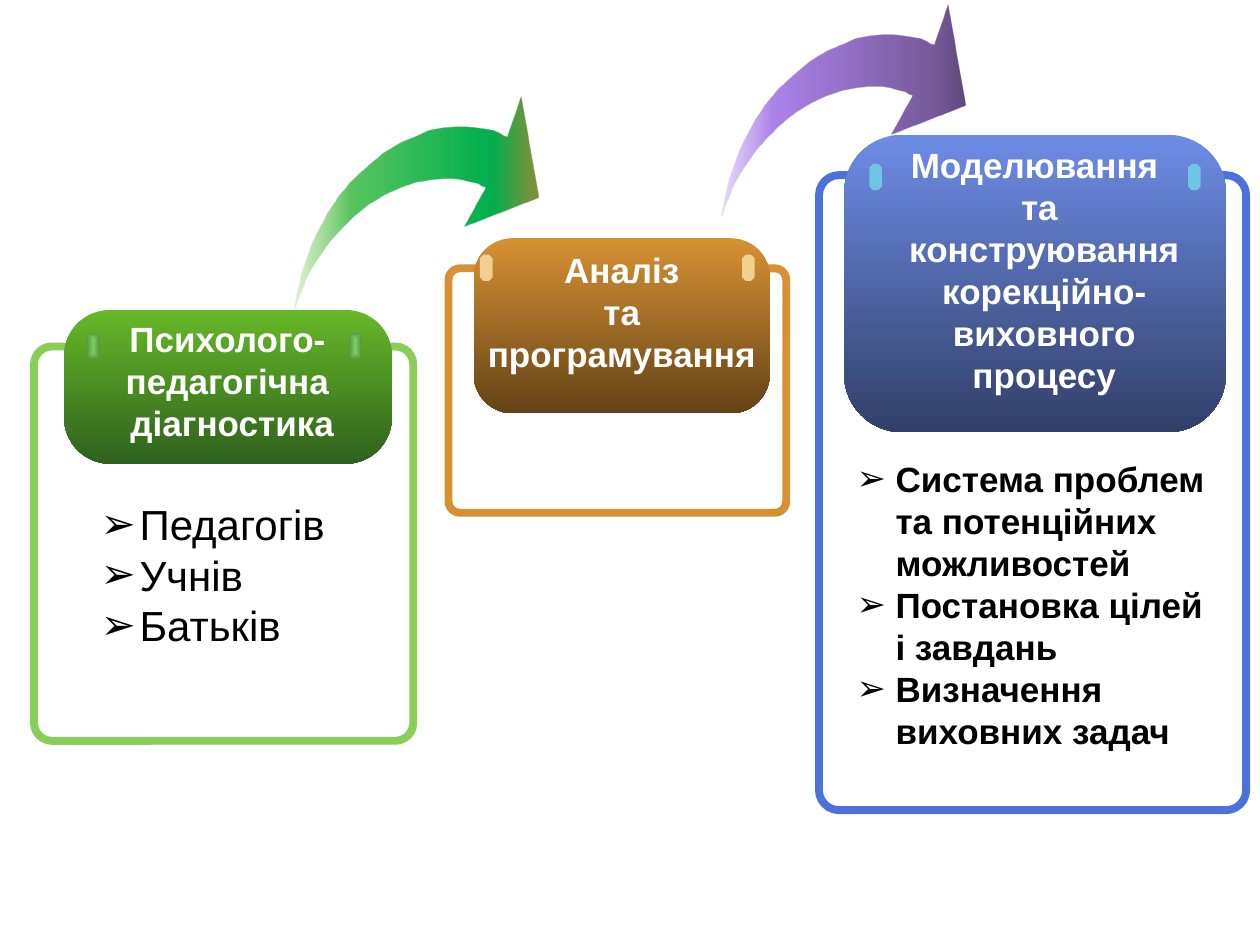
from lxml import etree
from pptx import Presentation
from pptx.dml.color import RGBColor
from pptx.enum.shapes import MSO_SHAPE
from pptx.enum.text import MSO_AUTO_SIZE, PP_ALIGN
from pptx.oxml.ns import qn
from pptx.util import Inches, Pt

COLORS = {
    "text": "000000", "header text": "FFFFFF",
    "green frame": "88CE58", "green top": "66B828", "green bottom": "2F611D",
    "green pin": "7BCF5D", "green pin edge": "589443",
    "orange": "D79133", "orange bottom": "634317", "orange pin": "F1D08F",
    "blue frame": "4B71DD", "blue top": "6D8CE5", "blue bottom": "323F68",
    "blue pin": "6FC5E3",
    "leaf": "98D376", "grass": "59C55E", "emerald": "00B050", "olive": "77933C",
    "lilac": "B694ED", "violet": "AD83EB", "plum": "735896", "dark plum": "604A7B",
}

# Curved arrow outline in hundredths of an inch, from its tail
ARROW_POINTS = [
    (0, 168), (1, 167), (2, 164), (4, 158), (7, 151), (10, 143), (15, 134),
    (21, 125), (28, 115), (37, 105), (47, 95), (58, 86), (71, 78), (84, 72),
    (96, 68), (107, 66), (117, 65), (126, 65), (133, 66), (140, 68), (145, 69),
    (148, 71), (151, 72), (134, 103), (193, 80), (179, 0), (168, 32), (165, 31),
    (162, 29), (157, 27), (151, 26), (144, 25), (136, 24), (127, 24), (117, 25),
    (106, 27), (95, 32), (83, 37), (70, 45), (57, 56), (45, 67), (35, 79),
    (27, 91), (20, 104), (14, 116), (10, 128), (6, 139), (4, 148), (2, 157),
    (1, 163), (0, 167),
]


def rgb(name):
    return RGBColor.from_string(COLORS[name])


class SlideBuilder:
    font = "Arial"
    frame_width = Pt(4.5)
    bullet = "➢"
    bullet_indent = Inches(0.31)

    def __init__(self, slide):
        self.slide = slide

    def shape(self, kind, box, adjustment):
        shape = self.slide.shapes.add_shape(kind, *map(Inches, box))
        shape.adjustments[0] = adjustment
        shape.shadow.inherit = False
        shape.line.fill.background()
        return shape

    def gradient(self, shape, stops, angle=None):
        """Fill with (position, colour, opacity) stops; no angle means from the centre."""
        shape.fill.background()
        properties = shape._element.spPr
        gradient = etree.Element(qn("a:gradFill"), rotWithShape="1")
        stop_list = etree.SubElement(gradient, qn("a:gsLst"))
        for position, color, opacity in stops:
            stop = etree.SubElement(stop_list, qn("a:gs"), pos=str(position * 1000))
            value = etree.SubElement(stop, qn("a:srgbClr"), val=COLORS[color])
            if opacity < 100:
                etree.SubElement(value, qn("a:alpha"), val=str(opacity * 1000))
        if angle is None:
            center = etree.SubElement(gradient, qn("a:path"), path="shape")
            etree.SubElement(center, qn("a:fillToRect"),
                             dict.fromkeys("ltrb", "50000"))
        else:
            etree.SubElement(gradient, qn("a:lin"), ang=str(angle * 60000), scaled="1")
        properties.replace(properties.find(qn("a:noFill")), gradient)

    def frame(self, box, color):
        shape = self.shape(MSO_SHAPE.ROUNDED_RECTANGLE, box, 0.047)
        shape.fill.background()
        shape.line.color.rgb = rgb(color)
        shape.line.width = self.frame_width

    def header(self, box, rounding, top, bottom):
        shape = self.shape(MSO_SHAPE.ROUNDED_RECTANGLE, box, rounding)
        self.gradient(shape, [(0, top, 100), (100, bottom, 100)], 90)

    def pin(self, left, top, color, edge=None):
        shape = self.shape(MSO_SHAPE.OCTAGON, (left, top, 0.1, 0.21), 0.293)
        if edge:
            self.gradient(shape, [(0, color, 100), (100, edge, 100)])
        else:
            shape.fill.solid()
            shape.fill.fore_color.rgb = rgb(color)

    def arrow(self, left, top, stops):
        builder = self.slide.shapes.build_freeform(*ARROW_POINTS[0], scale=Inches(0.01))
        builder.add_line_segments(ARROW_POINTS[1:], close=True)
        shape = builder.convert_to_shape(Inches(left), Inches(top))
        shape.shadow.inherit = False
        shape.line.fill.background()
        self.gradient(shape, stops, 0)

    def text(self, box, lines, size, color, bold, bulleted=False):
        frame = self.slide.shapes.add_textbox(*map(Inches, box)).text_frame
        frame.word_wrap = bulleted
        frame.auto_size = MSO_AUTO_SIZE.SHAPE_TO_FIT_TEXT
        for index, line in enumerate(lines):
            paragraph = frame.add_paragraph() if index else frame.paragraphs[0]
            if bulleted:
                self.add_bullet(paragraph)
            else:
                paragraph.alignment = PP_ALIGN.CENTER
            run = paragraph.add_run()
            run.text = line
            run.font.name = self.font
            run.font.size = Pt(size)
            run.font.bold = bold
            run.font.color.rgb = rgb(color)

    def add_bullet(self, paragraph):
        properties = paragraph._p.get_or_add_pPr()
        properties.set("marL", str(self.bullet_indent))
        properties.set("indent", str(-self.bullet_indent))
        etree.SubElement(properties, qn("a:buFont"), typeface=self.font)
        etree.SubElement(properties, qn("a:buChar"), char=self.bullet)

    def header_text(self, box, lines):
        self.text(box, lines, 20, "header text", True)

    def bullets(self, box, lines, size, bold):
        self.text(box, lines, size, "text", bold, bulleted=True)


def main():
    presentation = Presentation()
    presentation.slide_width = Inches(10)
    presentation.slide_height = Inches(7.5)
    builder = SlideBuilder(presentation.slides.add_slide(presentation.slide_layouts[6]))

    # Diagnostics card
    builder.frame((0.27, 2.75, 3.01, 3.13), "green frame")
    builder.header((0.51, 2.46, 2.6, 1.22), 0.3, "green top", "green bottom")
    for left in (0.69, 2.77):
        builder.pin(left, 2.64, "green pin", "green pin edge")

    # Analysis card
    builder.frame((3.56, 2.13, 2.68, 1.94), "orange")
    builder.header((3.76, 1.89, 2.35, 1.39), 0.224, "orange", "orange bottom")
    for left in (3.81, 5.89):
        builder.pin(left, 2.02, "orange pin")

    # Modelling card
    builder.frame((6.5, 1.39, 3.39, 5.04), "blue frame")
    builder.header((6.7, 1.07, 3.03, 2.36), 0.195, "blue top", "blue bottom")
    for left in (6.9, 9.43):
        builder.pin(left, 1.3, "blue pin")

    # Arrows between the cards
    builder.arrow(2.34, 0.77, [(0, "leaf", 32), (23, "grass", 100),
                               (80, "emerald", 100), (97, "olive", 100)])
    builder.arrow(5.73, 0.04, [(0, "lilac", 32), (21, "violet", 100),
                               (90, "plum", 100), (99, "dark plum", 100)])

    # Card texts
    builder.header_text((0.85, 2.47, 1.91, 1.11),
                        ["Психолого-", "педагогічна", " діагностика"])
    builder.bullets((0.7, 3.91, 2.8, 1.31), ["Педагогів", "Учнів", "Батьків"], 24, False)
    builder.header_text((3.76, 1.92, 2.35, 1.11), ["Аналіз", "та", "програмування"])
    builder.header_text((7.03, 1.09, 2.44, 2.12),
                        ["Моделювання ", " та ", " конструювання",
                         " корекційно-", " виховного", " процесу"])
    builder.bullets((6.7, 3.58, 3.03, 2.46),
                    ["Система проблем та потенційних можливостей",
                     "Постановка цілей і завдань",
                     "Визначення виховних задач"], 20, True)

    presentation.save("out.pptx")


if __name__ == "__main__":
    main()
